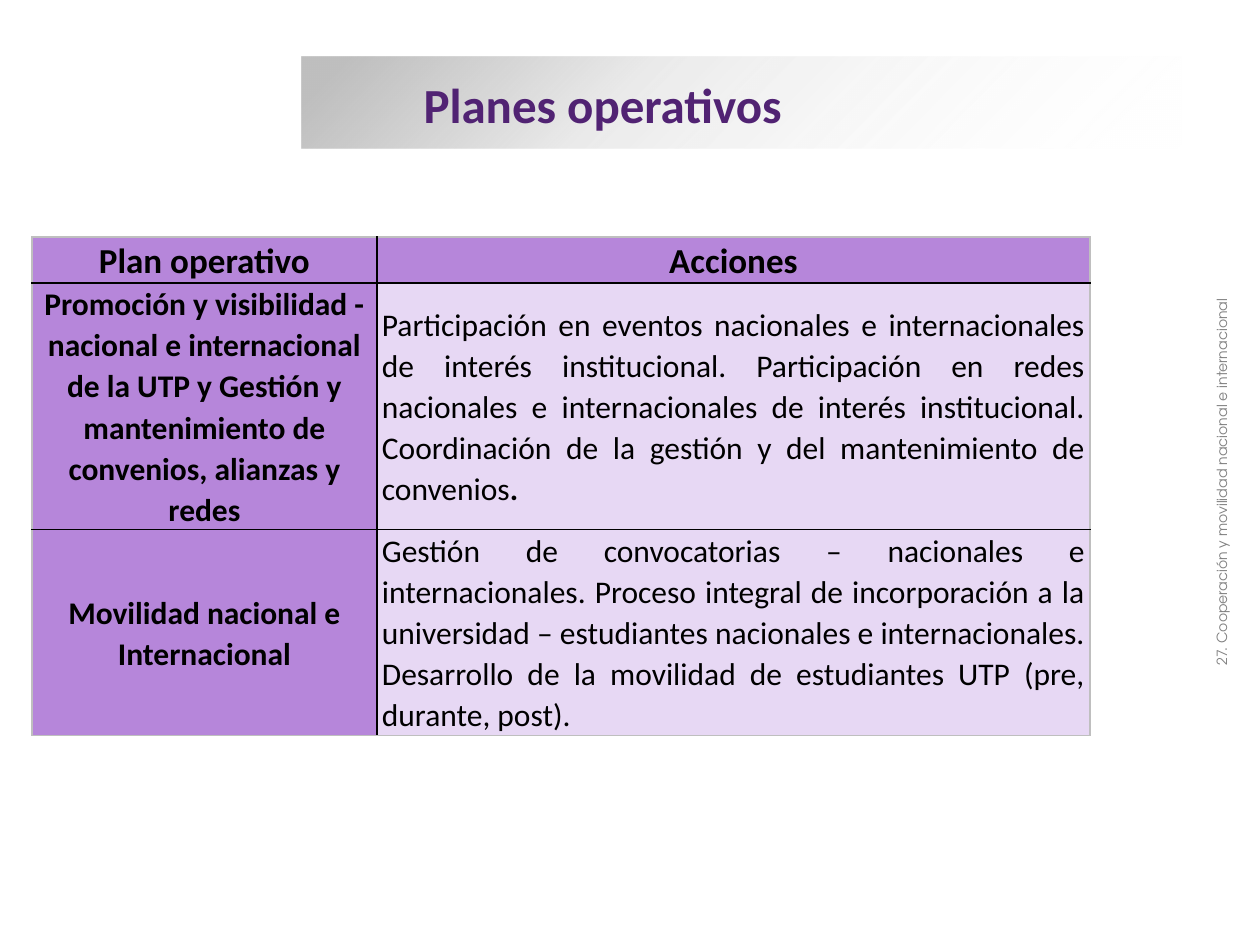
"""Builds the slide of operating plans and their actions."""
from lxml.etree import SubElement as Sub
from pptx import Presentation
from pptx.dml.color import RGBColor as Rgb
from pptx.enum.shapes import MSO_SHAPE as Kind
from pptx.enum.text import MSO_ANCHOR as Anchor, PP_ALIGN as Align
from pptx.oxml.ns import qn
from pptx.util import Pt

HUES = {"title": "512373", "head": "B686DA", "body": "E7D8F4", "ink": "000000",
        "note": "808080", "edge": "BFBFBF", "white": "FFFFFF"}
TITLE = "Planes operativos"
NOTE = "27. Cooperación y movilidad nacional e internacional"
ROWS = [
    (["Plan operativo"], ["Acciones"]),
    (["Promoción y visibilidad - nacional e internacional de la UTP y Gestión y "
      "mantenimiento de convenios, alianzas y redes"],
     ["Participación en eventos nacionales e internacionales de interés institucional. "
      "Participación en redes nacionales e internacionales de interés institucional. "
      "Coordinación de la gestión y del mantenimiento de convenios", "."]),
    (["Movilidad nacional e Internacional"],
     ["Gestión de convocatorias – nacionales e internacionales. Proceso integral de "
      "incorporación a la universidad – estudiantes nacionales e internacionales. "
      "Desarrollo de la movilidad de estudiantes UTP (pre, durante, post)."]),
]
WIDTHS, HEIGHTS = [345, 713], [45, 242, 202]
STOPS = [(5, "edge", 100), (37, "edge", 31), (100, "white", 0)]
SCALE = 914400 / 126


def px(*nums):
    return [round(n * SCALE) for n in nums]


def write(para, text, size, hue, bold=False, font="Calibri"):
    run = para.add_run()
    run.text = text
    run.font.size, run.font.bold, run.font.name = Pt(size), bold, font
    run.font.color.rgb = Rgb.from_string(HUES[hue])


def add_band(slide):
    band = slide.shapes.add_shape(Kind.RECTANGLE, *px(302, 57, 879, 91))
    band.shadow.inherit = False
    band.line.fill.background()
    band.fill.gradient()
    grad = band._element.spPr.find(qn("a:gradFill"))
    for kid in list(grad):
        grad.remove(kid)
    stops = Sub(grad, qn("a:gsLst"))
    for place, hue, alpha in STOPS:
        stop = Sub(stops, qn("a:gs"), pos=str(place * 1000))
        tint = Sub(stop, qn("a:srgbClr"), val=HUES[hue])
        Sub(tint, qn("a:alpha"), val=str(alpha * 1000))
    Sub(grad, qn("a:lin"), ang=str(45 * 60000), scaled="0")


def add_title(slide):
    title = slide.shapes.title
    title.left, title.top, title.width, title.height = px(411, 68, 781, 72)
    title.text_frame.vertical_anchor = Anchor.MIDDLE
    para = title.text_frame.paragraphs[0]
    para.alignment = Align.LEFT
    write(para, TITLE, 28, "title", True)
    tree = slide.shapes._spTree
    tree.remove(title._element)
    tree.append(title._element)


def edge(cell, side, hue, width):
    line = Sub(cell._tc.get_or_add_tcPr(), qn("a:ln" + side), w=str(Pt(width)))
    Sub(Sub(line, qn("a:solidFill")), qn("a:srgbClr"), val=HUES[hue])


def fill_cell(cell, runs, row, col):
    last = len(ROWS) - 1
    edge(cell, "L", "ink" if col else "edge", 1)
    edge(cell, "R", "edge" if col else "ink", 1)
    edge(cell, "T", "ink" if row else "edge", 1.5 if row == 1 else 1)
    edge(cell, "B", "ink" if row < last else "edge", 1 if row else 1.5)
    body = row > 0 and col > 0
    cell.fill.solid()
    cell.fill.fore_color.rgb = Rgb.from_string(HUES["body" if body else "head"])
    cell.margin_left, cell.margin_right = px(5, 5)
    cell.margin_top = cell.margin_bottom = 0
    cell.vertical_anchor = Anchor.MIDDLE
    para = cell.text_frame.paragraphs[0]
    para.alignment = Align.JUSTIFY if body else Align.CENTER
    para.line_spacing = 1.07
    for i, text in enumerate(runs):
        write(para, text, 18 if row else 20, "ink", not body or i > 0)


def add_plans(slide):
    spot = px(32, 237, sum(WIDTHS), sum(HEIGHTS))
    table = slide.shapes.add_table(len(ROWS), len(WIDTHS), *spot).table
    table.first_row = table.horz_banding = False
    for col, width in zip(table.columns, px(*WIDTHS)):
        col.width = width
    for row, height in zip(table.rows, px(*HEIGHTS)):
        row.height = height
    for r, row in enumerate(ROWS):
        for c, runs in enumerate(row):
            fill_cell(table.cell(r, c), runs, r, c)


def add_note(slide):
    box = slide.shapes.add_textbox(*px(917, 467, 610, 30))
    box.rotation = 270
    box.text_frame.word_wrap = True
    para = box.text_frame.paragraphs[0]
    para.alignment = Align.CENTER
    write(para, NOTE, 8, "note", font="TeX Gyre Adventor")


def main():
    deck = Presentation()
    deck.slide_width, deck.slide_height = px(1260, 945)
    slide = deck.slides.add_slide(deck.slide_layouts[5])
    for add in (add_band, add_title, add_plans, add_note):
        add(slide)
    deck.save("out.pptx")


if __name__ == "__main__":
    main()
